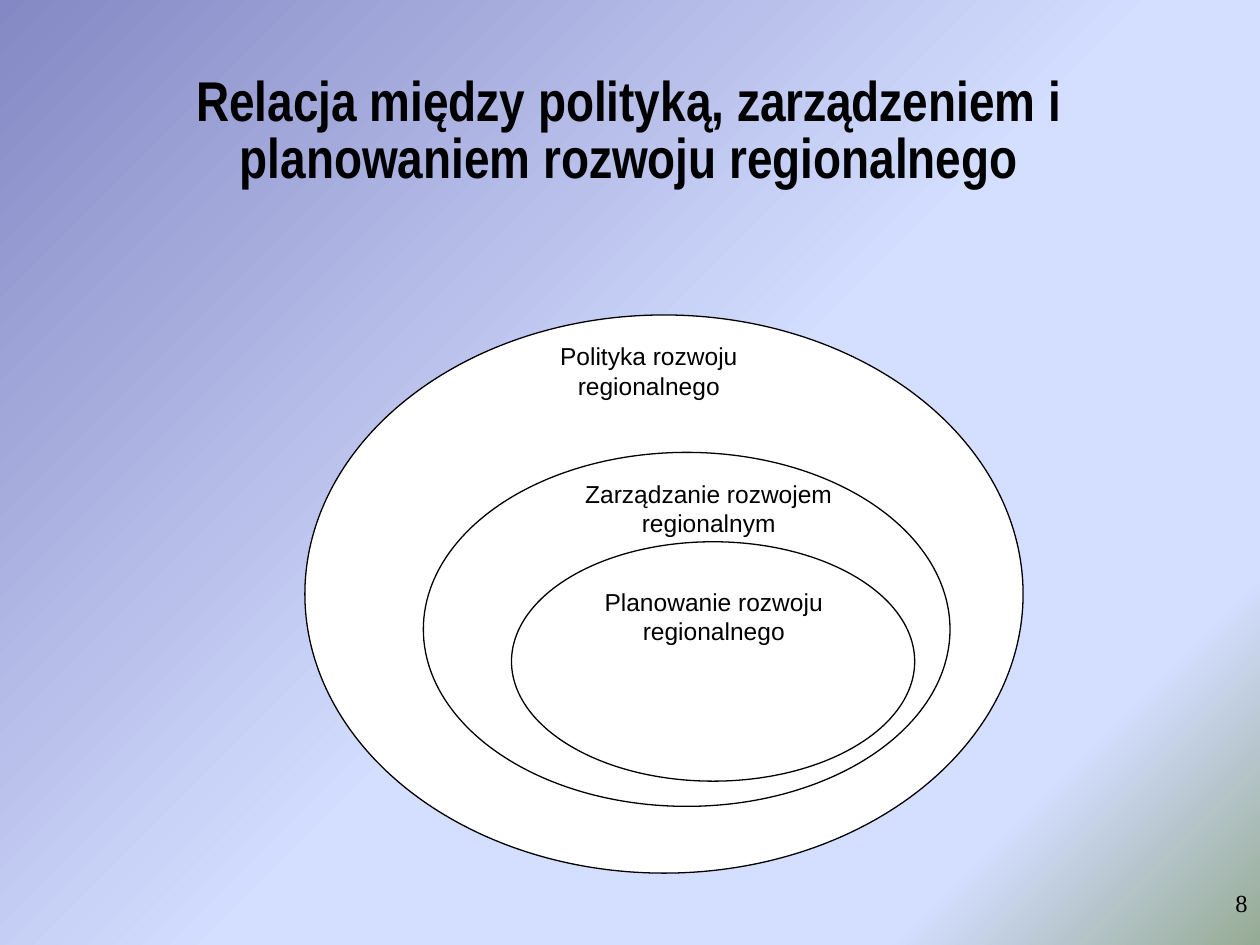
from copy import deepcopy
from dataclasses import dataclass

from pptx import Presentation
from pptx.dml.color import RGBColor
from pptx.enum.shapes import MSO_SHAPE as Shape
from pptx.enum.text import MSO_ANCHOR as Anchor, MSO_AUTO_SIZE as AutoSize, PP_ALIGN as Align
from pptx.oxml.ns import qn
from pptx.util import Inches, Pt

COLUMNS, ROWS = 100, 75
TITLE_ONLY = 5


@dataclass(frozen=True)
class Theme:
    ink: str = "000000"
    paper: str = "FFFFFF"
    backdrop: tuple = ((0, "8488C4"), (53, "D4DEFF"), (83, "D4DEFF"), (100, "96AB94"))
    title_font: str = "Arial Narrow"
    label_font: str = "Arial"
    number_font: str = "Times New Roman"
    title_size: int = 32
    text_size: int = 14
    outline: float = 0.75


class SlideBuilder:
    """Draws on one slide; boxes are (column, row, columns, rows)."""

    def __init__(self, presentation, theme):
        self.theme = theme
        self.column = presentation.slide_width / COLUMNS
        self.row = presentation.slide_height / ROWS
        self.slide = presentation.slides.add_slide(presentation.slide_layouts[TITLE_ONLY])

    def lengths(self, box):
        units = (self.column, self.row) * 2
        return [round(share * unit) for share, unit in zip(box, units)]

    def backdrop(self):
        fill = self.slide.background.fill
        fill.gradient()
        fill.gradient_angle = 315
        stop_list = self.slide.element.find(".//" + qn("a:gsLst"))
        while len(stop_list) < len(self.theme.backdrop):
            stop_list.append(deepcopy(stop_list[0]))
        for stop, (percent, color) in zip(fill.gradient_stops, self.theme.backdrop):
            stop.position = percent / 100
            stop.color.rgb = RGBColor.from_string(color)

    def set_text(self, shape, text, font_name, size, align, bold=False):
        shape.text_frame.word_wrap = True
        paragraph = shape.text_frame.paragraphs[0]
        paragraph.text = text
        paragraph.alignment = align
        font = paragraph.font
        font.name, font.size, font.bold = font_name, Pt(size), bold
        font.color.rgb = RGBColor.from_string(self.theme.ink)
        return paragraph

    def title(self, text, box):
        shape = self.slide.shapes.title
        shape.left, shape.top, shape.width, shape.height = self.lengths(box)
        shape.text_frame.auto_size = AutoSize.NONE
        shape.text_frame.vertical_anchor = Anchor.BOTTOM
        paragraph = self.set_text(shape, text, self.theme.title_font,
                                  self.theme.title_size, Align.CENTER, bold=True)
        paragraph.line_spacing = 0.85
        paragraph.space_before = Pt(0)

    def text(self, text, box, font_name, align=Align.CENTER):
        shape = self.slide.shapes.add_textbox(*self.lengths(box))
        self.set_text(shape, text, font_name, self.theme.text_size, align)

    def nested_ellipses(self, boxes):
        group = self.slide.shapes.add_group_shape()
        for box in boxes:
            ellipse = group.shapes.add_shape(Shape.OVAL, *self.lengths(box))
            ellipse.shadow.inherit = False
            ellipse.fill.solid()
            ellipse.fill.fore_color.rgb = RGBColor.from_string(self.theme.paper)
            ellipse.line.color.rgb = RGBColor.from_string(self.theme.ink)
            ellipse.line.width = Pt(self.theme.outline)


def main():
    presentation = Presentation()
    presentation.slide_width, presentation.slide_height = Inches(10), Inches(7.5)
    theme = Theme()
    builder = SlideBuilder(presentation, theme)

    builder.backdrop()
    builder.title("Relacja między polityką, zarządzeniem i planowaniem rozwoju regionalnego",
                  (3.9, 3.9, 92.1, 11.7))
    builder.text("8", (79.2, 70, 20.8, 5), theme.number_font, Align.RIGHT)

    levels = [
        ("Polityka rozwoju regionalnego", (24.2, 25, 57, 44.3), (39.8, 26.6, 23.4, 5.7)),
        ("Zarządzanie rozwojem regionalnym", (33.6, 35.9, 41.8, 28.1), (42.2, 37.5, 28.1, 5.7)),
        ("Planowanie rozwoju regionalnego", (40.6, 43, 32, 19), (46.9, 46.1, 19.5, 5.7)),
    ]
    builder.nested_ellipses([ellipse_box for _, ellipse_box, _ in levels])
    for label, _, label_box in levels:
        builder.text(label, label_box, theme.label_font)

    presentation.save("out.pptx")


if __name__ == "__main__":
    main()
